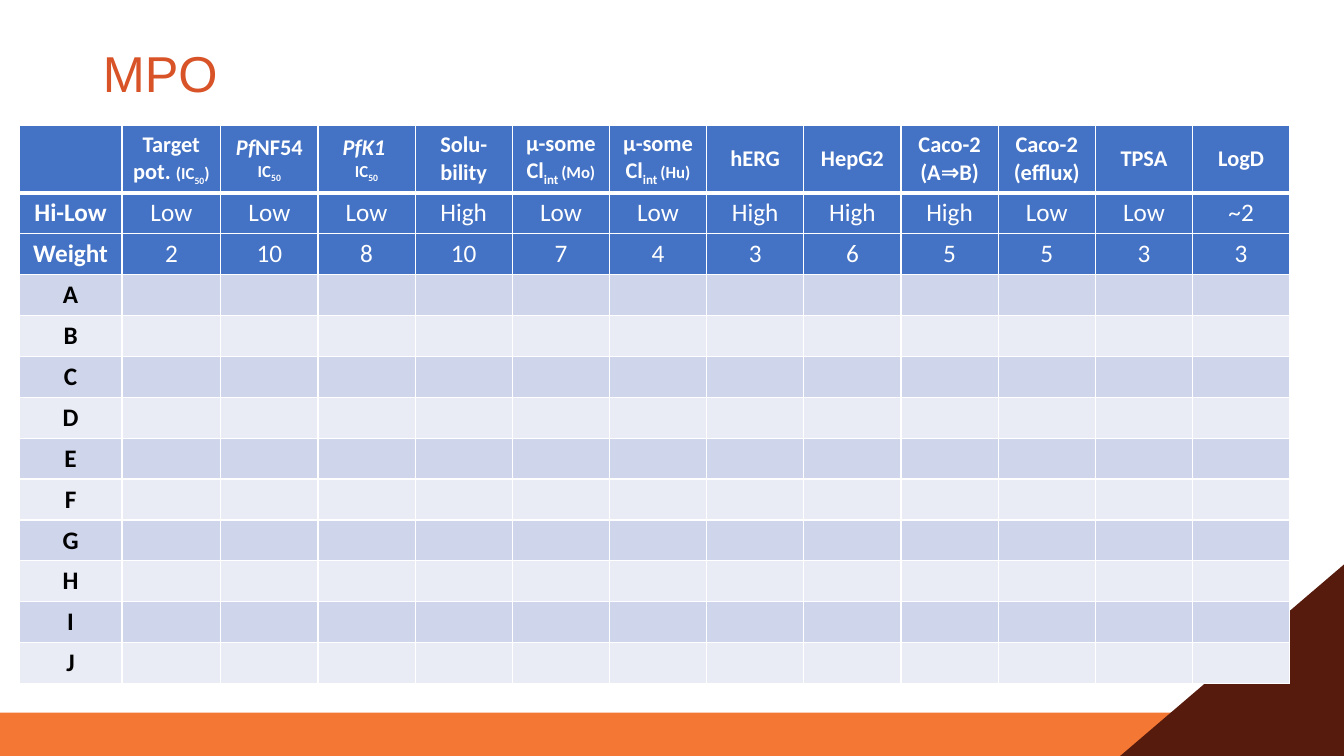
import pptx
import pptx.util
import pptx.dml.color
import pptx.enum.shapes
import pptx.enum.text
import pptx.oxml.ns
import lxml.etree

Inches = pptx.util.Inches
Pt = pptx.util.Pt
SHAPES = pptx.enum.shapes.MSO_SHAPE
ANCHOR = pptx.enum.text.MSO_ANCHOR
ALIGN = pptx.enum.text.PP_ALIGN

COLORS = {
    "title": "D85327",
    "band": "F47734",
    "corner": "561B0D",
    "header": "4472C4",
    "odd": "CFD5EA",
    "even": "E9EBF5",
    "white": "FFFFFF",
    "black": "000000",
}

SMALL, SUB, ITALIC = "small", "sub", "italic"
IC50 = [("IC", SMALL), ("50", SMALL, SUB)]


def clearance(species):
    return [[("µ-some Cl",), ("int ", SUB), (f"({species})", SMALL)]]


HEADINGS = [
    [],
    [[("Target pot. ",), ("(IC", SMALL), ("50", SMALL, SUB), (")", SMALL)]],
    [[("Pf", ITALIC), ("NF54 ",), *IC50]],
    [[("PfK1 ", ITALIC)], IC50],
    [[("Solu-bility",)]],
    clearance("Mo"),
    clearance("Hu"),
    [[("hERG",)]],
    [[("HepG2",)]],
    [[("Caco-2 (A⇒B)",)]],
    [[("Caco-2 (efflux)",)]],
    [[("TPSA",)]],
    [[("LogD",)]],
]
CRITERIA = [
    ["Hi-Low", "Low", "Low", "Low", "High", "Low", "Low",
     "High", "High", "High", "Low", "Low", "~2"],
    ["Weight", "2", "10", "8", "10", "7", "4", "3", "6", "5", "5", "3", "3"],
]
COMPOUNDS = "ABCDEFGHIJ"


def rgb(name):
    return pptx.dml.color.RGBColor.from_string(COLORS[name])


def style_font(font, size, color, bold=False, name="Calibri"):
    font.name = name
    font.size = Pt(size)
    font.bold = bold
    font.color.rgb = rgb(color)


def add_decoration(slide, preset, box, color):
    decoration = slide.shapes.add_shape(preset, *map(Inches, box))
    decoration.shadow.inherit = False
    decoration.fill.solid()
    decoration.fill.fore_color.rgb = rgb(color)
    decoration.line.fill.background()
    return decoration


def add_title(slide, text):
    title = slide.shapes.title
    title.left, title.top = Inches(0.92), Inches(0.4)
    title.width, title.height = Inches(7.47), Inches(0.71)
    frame = title.text_frame
    frame.text = text
    frame.auto_size = pptx.enum.text.MSO_AUTO_SIZE.NONE
    frame.vertical_anchor = ANCHOR.MIDDLE
    heading = frame.paragraphs[0]
    heading.alignment = ALIGN.LEFT
    heading.line_spacing = 0.9
    style_font(heading.runs[0].font, 36, "title", name="Arial")


def set_borders(cell, top=1, bottom=1):
    properties = cell._tc.get_or_add_tcPr()
    widths = {"lnL": 1, "lnR": 1, "lnT": top, "lnB": bottom}
    qn = pptx.oxml.ns.qn
    for side, width in widths.items():
        border = lxml.etree.SubElement(properties, qn(f"a:{side}"), w=str(Pt(width)))
        fill = lxml.etree.SubElement(border, qn("a:solidFill"))
        lxml.etree.SubElement(fill, qn("a:srgbClr"), val=COLORS["white"])


def fill_cell(cell, color):
    cell.fill.solid()
    cell.fill.fore_color.rgb = rgb(color)


def write_heading(cell, lines):
    cell.vertical_anchor = ANCHOR.MIDDLE
    frame = cell.text_frame
    for index, pieces in enumerate(lines):
        line = frame.add_paragraph() if index else frame.paragraphs[0]
        line.alignment = ALIGN.CENTER
        for text, *styles in pieces:
            run = line.add_run()
            run.text = text
            style_font(run.font, 12 if SMALL in styles else 16, "white", bold=True)
            run.font.italic = ITALIC in styles
            if SUB in styles:
                run._r.get_or_add_rPr().set("baseline", "-25000")


def write_value(cell, text, color, bold):
    value = cell.text_frame.paragraphs[0]
    value.text = text
    value.alignment = ALIGN.CENTER
    style_font(value.font, 18, color, bold)
    for run in value.runs:
        style_font(run.font, 18, color, bold)


def add_scoring_table(slide):
    body = CRITERIA + [[letter] + [""] * 12 for letter in COMPOUNDS]
    scoring = slide.shapes.add_table(
        len(body) + 1, len(HEADINGS),
        Inches(0.19), Inches(1.24), Inches(12.61), Inches(5.5)).table
    for index, column in enumerate(scoring.columns):
        column.width = Inches({0: 1.02, 1: 0.98}.get(index, 0.964))
    for index, row in enumerate(scoring.rows):
        row.height = Inches(0.405 if index else 0.67)

    for column, lines in enumerate(HEADINGS):
        cell = scoring.cell(0, column)
        set_borders(cell, bottom=3)
        fill_cell(cell, "header")
        write_heading(cell, lines)

    for row, values in enumerate(body, start=1):
        is_criterion = row <= len(CRITERIA)
        band = "header" if is_criterion else ("odd" if row % 2 else "even")
        for column, text in enumerate(values):
            cell = scoring.cell(row, column)
            set_borders(cell, top=3 if row == 1 else 1)
            fill_cell(cell, band)
            write_value(cell, text, "white" if is_criterion else "black", column == 0)


def main():
    deck = pptx.Presentation()
    deck.slide_width, deck.slide_height = Inches(13.33), Inches(7.5)
    slide = deck.slides.add_slide(deck.slide_layouts[5])
    add_decoration(slide, SHAPES.RECTANGLE, (0, 7.07, 13.31, 0.43), "band")
    corner = add_decoration(
        slide, SHAPES.ISOSCELES_TRIANGLE, (11.11, 5.6, 2.22, 1.9), "corner")
    corner.adjustments[0] = 1
    add_title(slide, "MPO")
    add_scoring_table(slide)
    deck.save("out.pptx")


if __name__ == "__main__":
    main()
